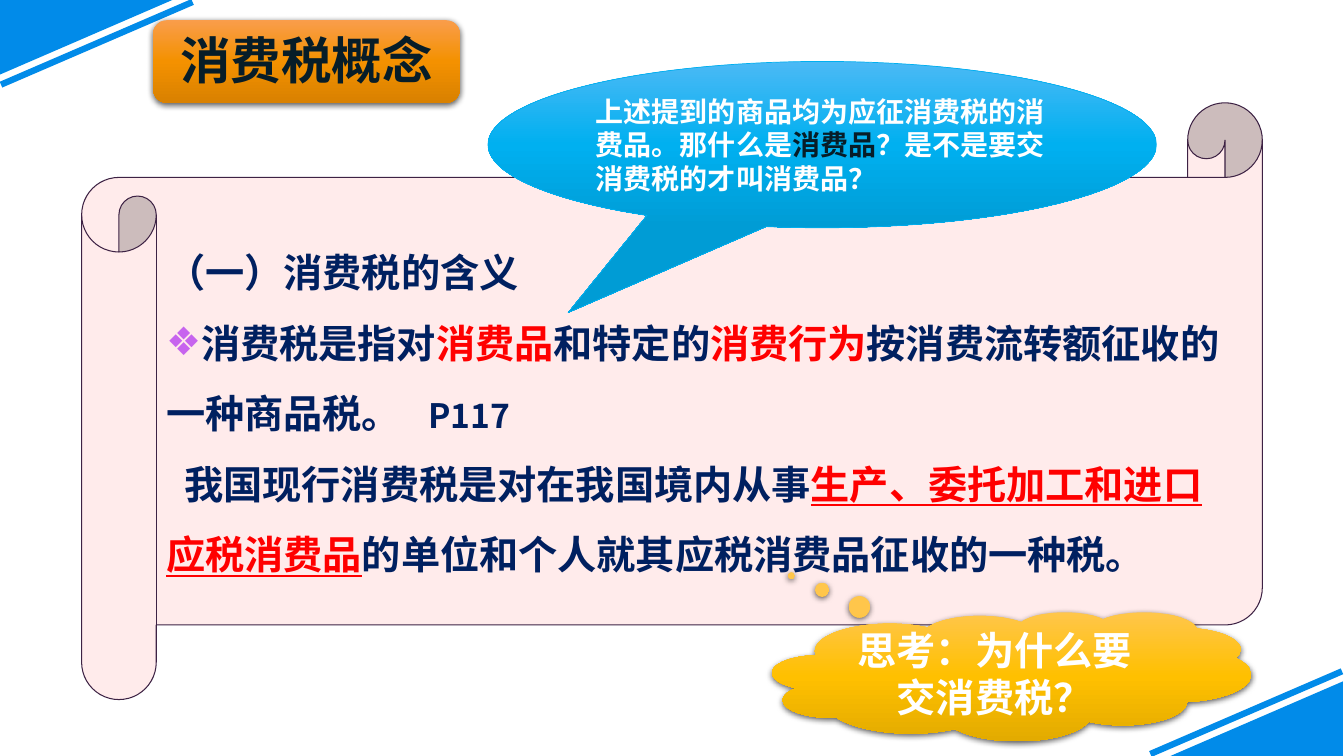
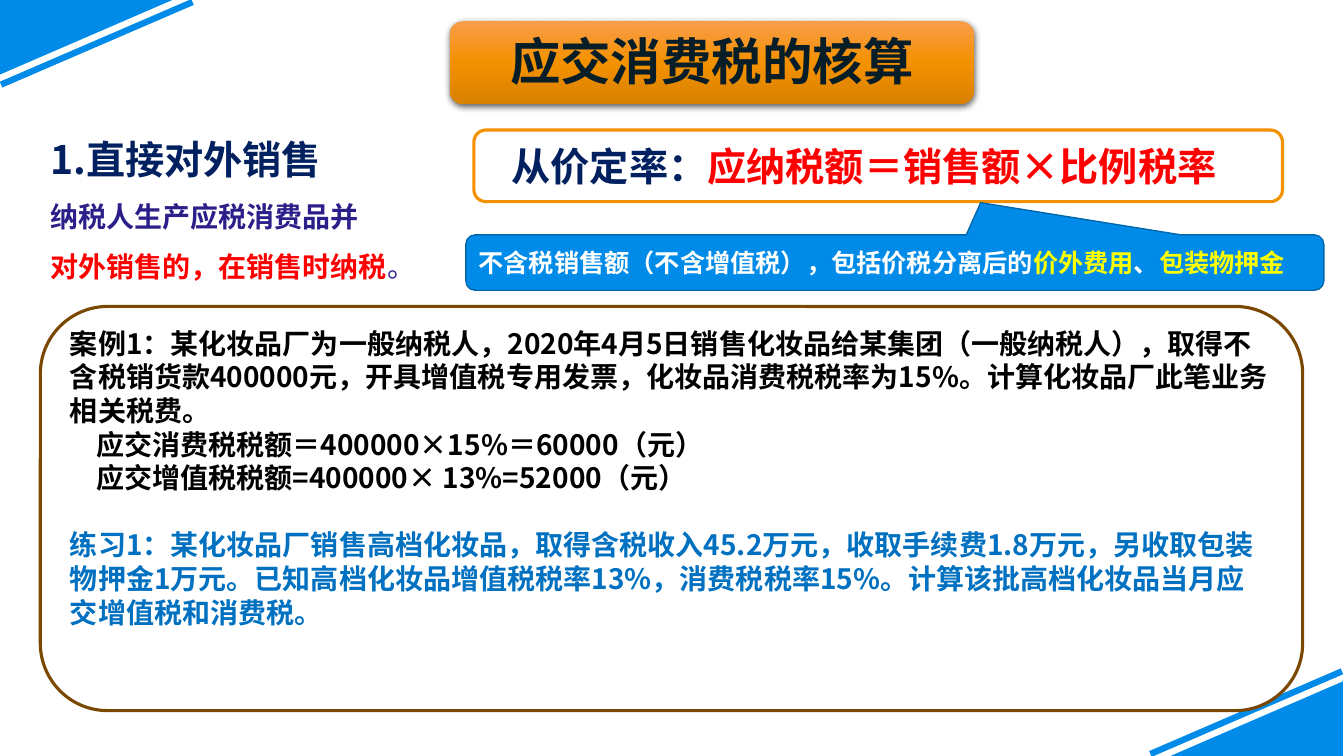
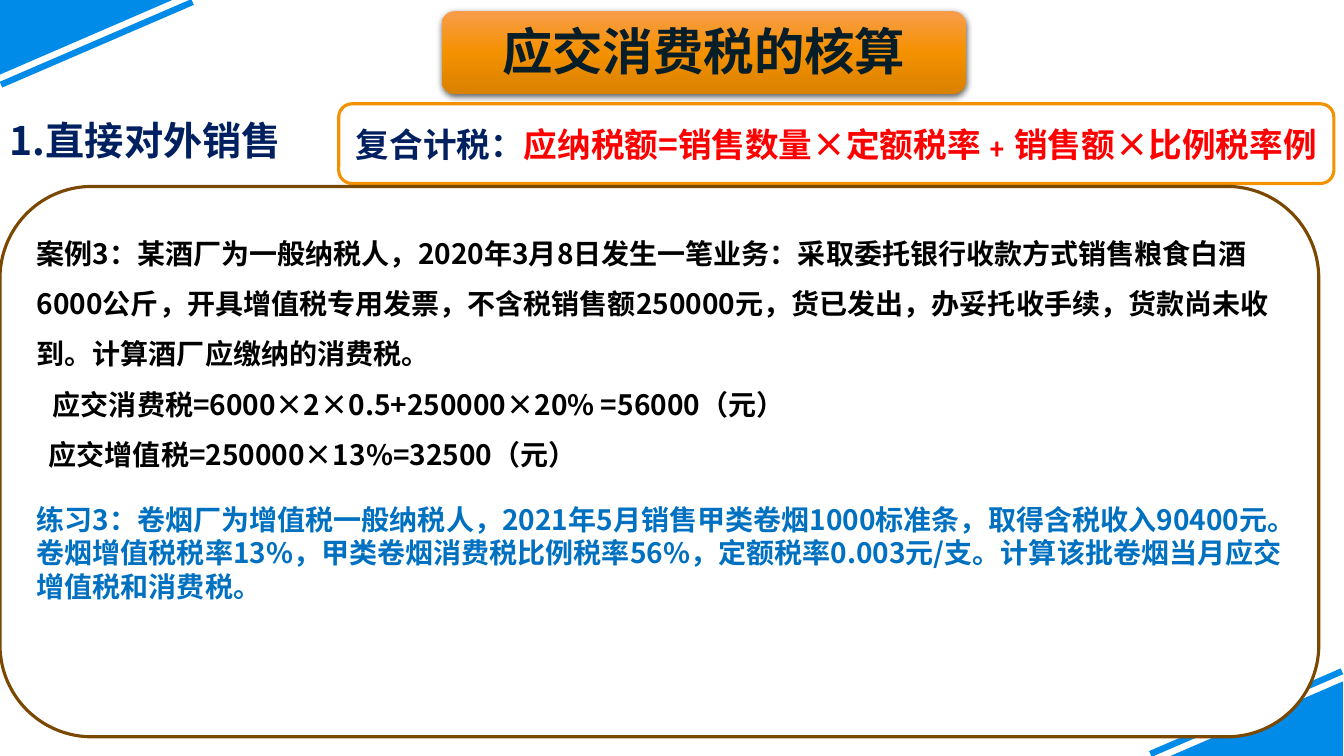
from copy import deepcopy
from lxml.etree import SubElement
from pptx import Presentation
from pptx.dml.color import RGBColor
from pptx.enum.shapes import MSO_CONNECTOR, MSO_SHAPE
from pptx.enum.text import MSO_ANCHOR, PP_ALIGN
from pptx.oxml.ns import qn
from pptx.util import Emu, Pt

WIDE, HIGH = 1333, 750
FACE = "Noto Sans CJK SC"
BLUE, NAVY, RED, INK = "018BE9", "002060", "FF0000", "071D28"
WHITE, BLACK, SKY, GOLD = "FFFFFF", "000000", "0070C0", "FFFF00"
AMBER, BROWN, PLUM = "F49100", "7A4800", "2C1F89"


def px(count):
    """Turn px into EMU, 100 px to the inch."""
    return Emu(round(count * 9144))


def hue(code):
    """Turn a hex string into a colour."""
    return RGBColor.from_string(code)


def paint(shape, fill, line=None, width=1.0, shadow=False):
    """Set fill (one colour or three stops), line and shadow."""
    shape.shadow.inherit = False
    props = shape._element.spPr
    if isinstance(fill, str):
        shape.fill.solid()
        shape.fill.fore_color.rgb = hue(fill)
    else:
        shape.fill.gradient()
        shape.fill.gradient_angle = 270
        stops = props.find(qn("a:gradFill")).find(qn("a:gsLst"))
        stops.insert(1, deepcopy(stops[0]))
        for stop, code, place in zip(shape.fill.gradient_stops, fill, (0, 0.5, 1)):
            stop.color.rgb = hue(code)
            stop.position = place
    if line:
        shape.line.color.rgb = hue(line)
        shape.line.width = Pt(width)
    else:
        shape.line.fill.background()
    if shadow:
        cast = SubElement(props.find(qn("a:effectLst")), qn("a:outerShdw"),
                          blurRad="57150", dist="19050", dir="5400000", algn="ctr", rotWithShape="0")
        tone = SubElement(cast, qn("a:srgbClr"), val=BLACK)
        SubElement(tone, qn("a:alpha"), val="63000")


def block(slide, kind, box, fill, line=None, width=1.0, shadow=False, adjust=()):
    """Add a preset shape in a px box."""
    shape = slide.shapes.add_shape(kind, *map(px, box))
    for spot, value in enumerate(adjust):
        shape.adjustments[spot] = value
    paint(shape, fill, line, width, shadow)
    return shape


def style(font, color=None, size=None, **more):
    """Set colour, size and other traits of a font."""
    if color:
        font.color.rgb = hue(color)
    if size:
        font.size = Pt(size)
    for name, value in more.items():
        setattr(font, name, value)


def para(runs, color, size, indent=0, bullet=None, tab=0, **extra):
    """Describe one paragraph; a run is text or (text, traits)."""
    return dict(runs=[runs] if isinstance(runs, str) else runs, color=color, size=size,
                indent=indent, bullet=bullet, tab=tab, **extra)


def fill_para(par, runs, color, size, indent, bullet, tab,
              align=PP_ALIGN.LEFT, space=1.0, before=0, face=FACE):
    """Write one described paragraph."""
    par.alignment = align
    par.line_spacing = space
    if before:
        par.space_before = Pt(before)
    props = par._p.get_or_add_pPr()
    if indent:
        props.set("marL", str(px(indent)))
    if bullet:
        sign, tint = bullet
        props.set("indent", str(px(-indent)))
        SubElement(SubElement(props, qn("a:buClr")), qn("a:srgbClr"), val=tint)
        SubElement(props, qn("a:buFont"), typeface="Arial")
        SubElement(props, qn("a:buChar"), char=sign)
    if tab:
        SubElement(SubElement(props, qn("a:tabLst")), qn("a:tab"), pos=str(px(tab)), algn="l")
    style(par.font, color, size, bold=True, name=face)
    SubElement(props.find(qn("a:defRPr")), qn("a:ea"), typeface=FACE)
    for item in runs:
        text, traits = (item, {}) if isinstance(item, str) else item
        run = par.add_run()
        run.text = text
        style(run.font, **traits)


def write(shape, paras, anchor=MSO_ANCHOR.MIDDLE, wrap=True, **inset):
    """Write described paragraphs into a shape."""
    frame = shape.text_frame
    frame.word_wrap = wrap
    frame.vertical_anchor = anchor
    for side, gap in inset.items():
        setattr(frame, "margin_" + side, px(gap))
    for spot, item in enumerate(paras):
        fill_para(frame.add_paragraph() if spot else frame.paragraphs[0], **item)


def corner(slide, place):
    """Draw one corner triangle and stripe through a point map."""
    first, *rest = [tuple(map(px, place(*spot))) for spot in ((0, 0), (171, 0), (0, 74))]
    form = slide.shapes.build_freeform(*first, scale=1.0)
    form.add_line_segments(rest, close=True)
    paint(form.convert_to_shape(), BLUE)
    ends = [px(v) for spot in ((1, 84), (191, 2)) for v in place(*spot)]
    stripe = slide.shapes.add_connector(MSO_CONNECTOR.STRAIGHT, *ends)
    stripe.line.color.rgb = hue(BLUE)
    stripe.line.width = Pt(4.5)
    SubElement(stripe._element.spPr, qn("a:effectLst"))


def start(deck):
    """Add a blank slide with both corners."""
    slide = deck.slides.add_slide(deck.slide_layouts[6])
    corner(slide, lambda x, y: (x, y))
    corner(slide, lambda x, y: (WIDE - 1 - x, HIGH - y))
    return slide


def banner(slide, box, text):
    """Add the orange title plate."""
    plate = block(slide, MSO_SHAPE.ROUNDED_RECTANGLE, box, ("F99D4B", AMBER, "D98100"), shadow=True)
    write(plate, [para(text, INK, 36, align=PP_ALIGN.CENTER)], MSO_ANCHOR.TOP)


def heading(slide, box, paras):
    """Add the section heading."""
    write(slide.shapes.add_textbox(*map(px, box)), paras)


def formula(slide, box, label, rule, size, right=10):
    """Add the framed tax formula."""
    frame = block(slide, MSO_SHAPE.ROUNDED_RECTANGLE, box, WHITE, AMBER, 2.25)
    write(frame, [para([label, (rule, dict(color=RED))], NAVY, size, align=PP_ALIGN.CENTER)], right=right)


def case(slide, box, paras, **layout):
    """Add the brown frame with worked case and exercise."""
    frame = block(slide, MSO_SHAPE.ROUNDED_RECTANGLE, box, WHITE, BROWN, 2.25)
    write(frame, paras, **layout)


def concept(deck):
    """Build the concept slide."""
    slide = start(deck)
    red = dict(color=RED)
    lined = dict(color=RED, underline=True)
    scroll = block(slide, MSO_SHAPE.HORIZONTAL_SCROLL, (81, 102, 1171, 592),
                   "FFEBEB", "3D2244", 0.75, adjust=(0.125,))
    write(scroll, [
        para("（一）消费税的含义", NAVY, 28, space=1.5),
        para(["消费税是指对", ("消费品", red), "和特定的", ("消费行为", red), "按消费流转额征收的"],
             NAVY, 28, indent=34, bullet=("❖", "C764EE"), space=1.5),
        para(["一种商品税。\t", ("P117", dict(size=24))], NAVY, 28, tab=260, space=1.5),
        para(["我国现行消费税是对在我国境内从事", ("生产、委托加工和进口", lined)],
             NAVY, 28, indent=18, space=1.5),
        para([("应税消费品", lined), "的单位和个人就其应税消费品征收的一种税。"], NAVY, 28, space=1.5),
    ], wrap=False)
    banner(slide, (152, 20, 304, 82), "消费税概念")
    speech = block(slide, MSO_SHAPE.OVAL_CALLOUT, (484, 61, 663, 165),
                   ("4BB9F5", "00B0F0", "009CD5"), "00B0F0", 0.5, adjust=(-0.38, 1.01))
    write(speech, [para(["上述提到的商品均为应征消费税的消费品。那什么是", ("消费品", dict(color=INK)),
                         "？是不是要交消费税的才叫消费品？"], WHITE, 20)])
    cloud = block(slide, MSO_SHAPE.CLOUD_CALLOUT, (766, 607, 475, 128),
                  ("FFC64B", "FFC000", "E3AB00"), shadow=True, adjust=(-0.46, -0.78))
    write(cloud, [para("思考：为什么要交消费税？", WHITE, 28, align=PP_ALIGN.CENTER)])


def by_price(deck):
    """Build the slide on tax by price."""
    slide = start(deck)
    banner(slide, (446, 21, 520, 82), "应交消费税的核算")
    heading(slide, (40, 115, 365, 162), [
        para("1.直接对外销售", NAVY, 28, space=1.5),
        para("纳税人生产应税消费品并", PLUM, 20, space=1.5),
        para(["对外销售的，在销售时纳税", ("。", dict(color=PLUM, bold=False))], RED, 20, space=1.5),
    ])
    formula(slide, (470, 129, 802, 71), "从价定率：", "应纳税额＝销售额×比例税率", 28, right=38)
    case(slide, (40, 304, 1252, 401), [
        para("案例1：某化妆品厂为一般纳税人，2020年4月5日销售化妆品给某集团（一般纳税人），取得不含税销货款400000元，"
             "开具增值税专用发票，化妆品消费税税率为15%。计算化妆品厂此笔业务相关税费。", BLACK, 20),
        para("应交消费税税额＝400000×15%＝60000（元）", BLACK, 20, indent=26),
        para("应交增值税税额=400000× 13%=52000（元）", BLACK, 20, indent=26),
        para("练习1：某化妆品厂销售高档化妆品，取得含税收入45.2万元，收取手续费1.8万元，另收取包装物押金1万元。"
             "已知高档化妆品增值税税率13%，消费税税率15%。计算该批高档化妆品当月应交增值税和消费税。", SKY, 20, before=24),
    ], anchor=MSO_ANCHOR.TOP, top=0)
    note = block(slide, MSO_SHAPE.ROUNDED_RECTANGULAR_CALLOUT, (462, 233, 851, 55),
                 BLUE, "0167AC", 1, adjust=(0.1, -1.08, 0.17))
    gold = dict(color=GOLD)
    write(note, [para(["不含税销售额（不含增值税），包括价税分离后的", ("价外费用", gold), "、", ("包装物押金", gold)],
                      WHITE, 18, face="Arial")])


def compound(deck):
    """Build the slide on compound tax."""
    slide = start(deck)
    heading(slide, (0, 96, 402, 92), [para("1.直接对外销售", NAVY, 28, space=0.9)])
    formula(slide, (336, 103, 987, 79), "复合计税：", "应纳税额=销售数量×定额税率﹢销售额×比例税率例", 24)
    case(slide, (0, 185, 1308, 546), [
        para("案例3：某酒厂为一般纳税人，2020年3月8日发生一笔业务：采取委托银行收款方式销售粮食白酒6000公斤，"
             "开具增值税专用发票，不含税销售额250000元，货已发出，办妥托收手续，货款尚未收到。计算酒厂应缴纳的消费税。",
             BLACK, 20, space=1.5),
        para("应交消费税=6000×2×0.5+250000×20% =56000（元）", BLACK, 20, indent=16, space=1.5),
        para("应交增值税=250000×13%=32500（元）", BLACK, 20, indent=12, space=1.5),
        para("练习3：卷烟厂为增值税一般纳税人，2021年5月销售甲类卷烟1000标准条，取得含税收入90400元。"
             "卷烟增值税税率13%，甲类卷烟消费税比例税率56%，定额税率0.003元/支。计算该批卷烟当月应交增值税和消费税。",
             SKY, 20, before=22),
    ], bottom=105)
    banner(slide, (438, 11, 520, 82), "应交消费税的核算")


def main():
    """Build and save the deck."""
    deck = Presentation()
    deck.slide_width, deck.slide_height = px(WIDE), px(HIGH)
    for build in (concept, by_price, compound):
        build(deck)
    deck.save("out.pptx")


if __name__ == "__main__":
    main()
